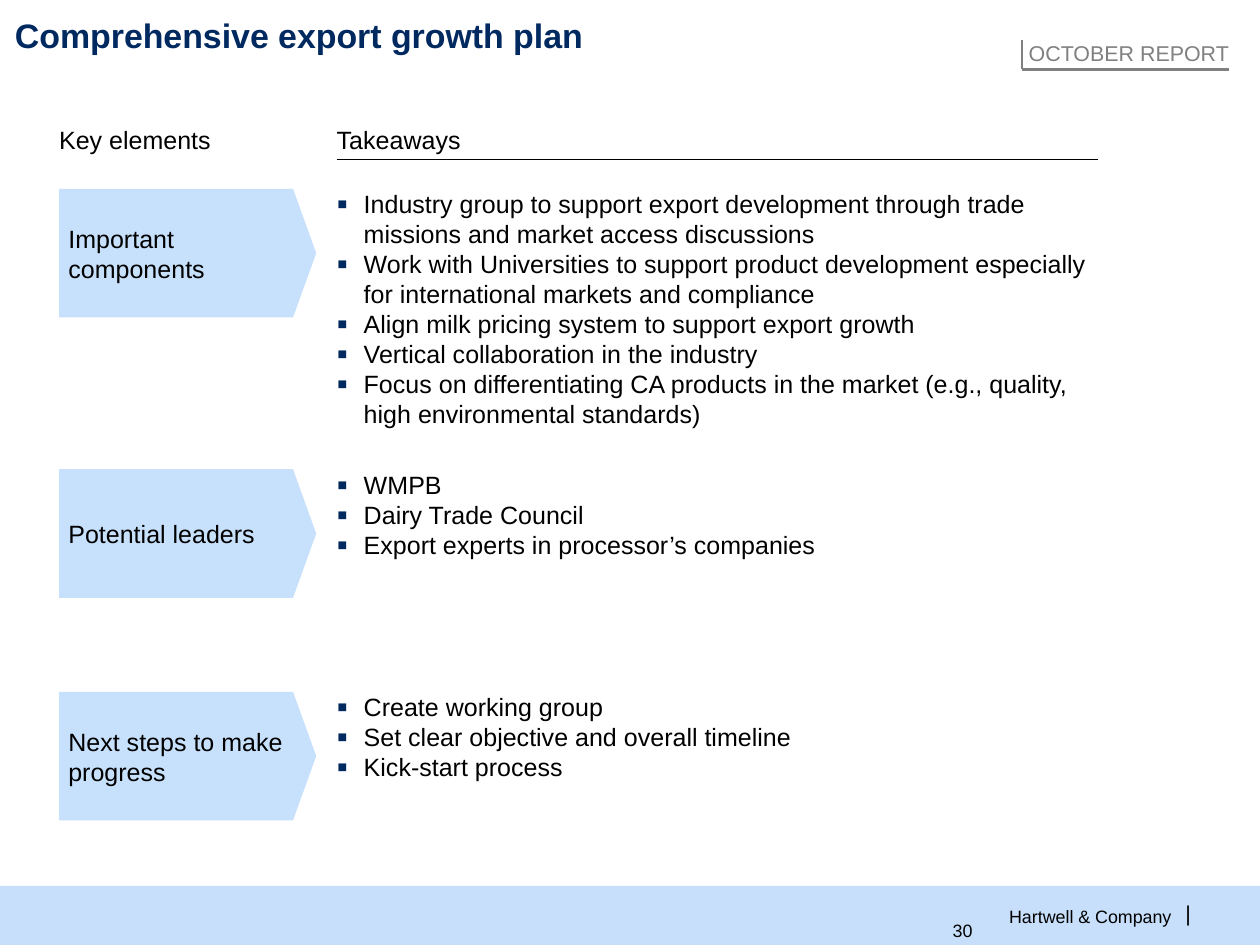
from lxml.etree import SubElement
from pptx import Presentation
from pptx.dml.color import RGBColor
from pptx.enum.shapes import MSO_CONNECTOR, MSO_SHAPE
from pptx.enum.text import MSO_ANCHOR, PP_ALIGN
from pptx.oxml.ns import qn
from pptx.util import Pt

NAVY = RGBColor(0x00, 0x29, 0x60)
PALE_BLUE = RGBColor(0xC7, 0xE0, 0xFB)
FOOTER_BLUE = RGBColor(0xC7, 0xDF, 0xFB)
GREY = RGBColor(0x80, 0x80, 0x80)
BLACK = RGBColor(0, 0, 0)

PAGE_WIDTH, PAGE_HEIGHT = 705.6, 529.2
LABEL_LEFT, LABEL_WIDTH, LABEL_HEIGHT = 33.1, 144, 72
TAKEAWAY_LEFT, TAKEAWAY_WIDTH = 188.6, 426.3
BULLET_INDENT = 15.1

ROWS = [
    (105.8, "Important components", [
        "Industry group to support export development through trade missions and market access discussions",
        "Work with Universities to support product development especially for international markets and compliance",
        "Align milk pricing system to support export growth",
        "Vertical collaboration in the industry",
        "Focus on differentiating CA products in the market (e.g., quality, high environmental standards)",
    ]),
    (262.8, "Potential leaders", [
        "WMPB",
        "Dairy Trade Council",
        "Export experts in processor’s companies",
    ]),
    (387.4, "Next steps to make progress", [
        "Create working group",
        "Set clear objective and overall timeline",
        "Kick-start process",
    ]),
]


def write(shape, lines, size=14, color=BLACK, bold=False, align=PP_ALIGN.LEFT,
          anchor=MSO_ANCHOR.TOP, margins=(0, 0, 0, 0), bullets=False):
    frame = shape.text_frame
    frame.word_wrap = True
    frame.vertical_anchor = anchor
    frame.margin_left, frame.margin_top, frame.margin_right, frame.margin_bottom = map(Pt, margins)
    for index, line in enumerate(lines):
        para = frame.add_paragraph() if index else frame.paragraphs[0]
        para.alignment = align
        span = para.add_run()
        span.text = line
        span.font.name = "Arial"
        span.font.size = Pt(size)
        span.font.bold = bold
        span.font.color.rgb = color
        if bullets:
            add_bullet(para)


def add_bullet(para):
    properties = para._p.get_or_add_pPr()
    properties.set("marL", str(Pt(BULLET_INDENT)))
    properties.set("indent", str(-Pt(BULLET_INDENT)))
    bullet_color = SubElement(properties, qn("a:buClr"))
    SubElement(bullet_color, qn("a:srgbClr"), val=str(NAVY))
    SubElement(properties, qn("a:buSzPct"), val="125000")
    SubElement(properties, qn("a:buFont"), typeface="Arial")
    SubElement(properties, qn("a:buChar"), char="▪")


def add_text(page, box, lines, **style):
    write(page.shapes.add_textbox(*map(Pt, box)), lines, **style)


def add_filled(page, kind, box, color):
    shape = page.shapes.add_shape(kind, *map(Pt, box))
    shape.shadow.inherit = False
    shape.fill.solid()
    shape.fill.fore_color.rgb = color
    shape.line.fill.background()
    return shape


def add_line(page, start, end, color, width):
    line = page.shapes.add_connector(MSO_CONNECTOR.STRAIGHT, *map(Pt, start + end))
    line.line.color.rgb = color
    line.line.width = Pt(width)
    SubElement(line._element.spPr, qn("a:effectLst"))


def add_footer(page, box):
    left, top, width, height = box
    add_filled(page, MSO_SHAPE.RECTANGLE, box, FOOTER_BLUE)
    middle = MSO_ANCHOR.MIDDLE
    add_text(page, (left + 558, top + 10.8, 97.9, 12.2), ["Hartwell & Company"],
             size=10, align=PP_ALIGN.RIGHT, anchor=middle)
    add_text(page, (left + 662, top + 7.9, 5, 14.4), ["|"],
             size=12, align=PP_ALIGN.RIGHT, anchor=middle)
    add_text(page, (left + 533.5, top + 6.5, 60, 36.7), ["30"], size=10, anchor=middle)


def add_sticker(page, box):
    left, top, width, height = box
    right, bottom = left + width, top + height
    add_text(page, box, ["OCTOBER REPORT"], size=12, color=GREY,
             align=PP_ALIGN.RIGHT, margins=(2, 0, 0, 2))
    add_line(page, (left, top), (left, bottom), GREY, 0.75)
    add_line(page, (left, bottom), (right, bottom), GREY, 2)


def add_headings(page, top):
    add_text(page, (LABEL_LEFT, top, LABEL_WIDTH, 16.7), ["Key elements"])
    add_text(page, (TAKEAWAY_LEFT, top, LABEL_WIDTH, 16.7), ["Takeaways"])
    rule = top + 19.4
    add_line(page, (TAKEAWAY_LEFT, rule), (TAKEAWAY_LEFT + TAKEAWAY_WIDTH, rule), BLACK, 0.75)


def add_row(page, top, label, takeaways):
    arrow = add_filled(page, MSO_SHAPE.PENTAGON,
                       (LABEL_LEFT, top, LABEL_WIDTH, LABEL_HEIGHT), PALE_BLUE)
    arrow.adjustments[0] = 0.18
    write(arrow, [label], anchor=MSO_ANCHOR.MIDDLE, margins=(5.2, 0, 12, 0))
    add_text(page, (TAKEAWAY_LEFT, top, TAKEAWAY_WIDTH, 16.7 * len(takeaways)),
             takeaways, bullets=True)


def main():
    deck = Presentation()
    deck.slide_width, deck.slide_height = Pt(PAGE_WIDTH), Pt(PAGE_HEIGHT)
    page = deck.slides.add_slide(deck.slide_layouts[6])
    add_footer(page, (0, 496.1, PAGE_WIDTH, 33.1))
    add_text(page, (8.4, 7.9, 679, 23), ["Comprehensive export growth plan"],
             size=19, color=NAVY, bold=True)
    add_sticker(page, (572.4, 22.3, 115.9, 16.6))
    add_headings(page, 69.8)
    for top, label, takeaways in ROWS:
        add_row(page, top, label, takeaways)
    deck.save("out.pptx")


if __name__ == "__main__":
    main()
